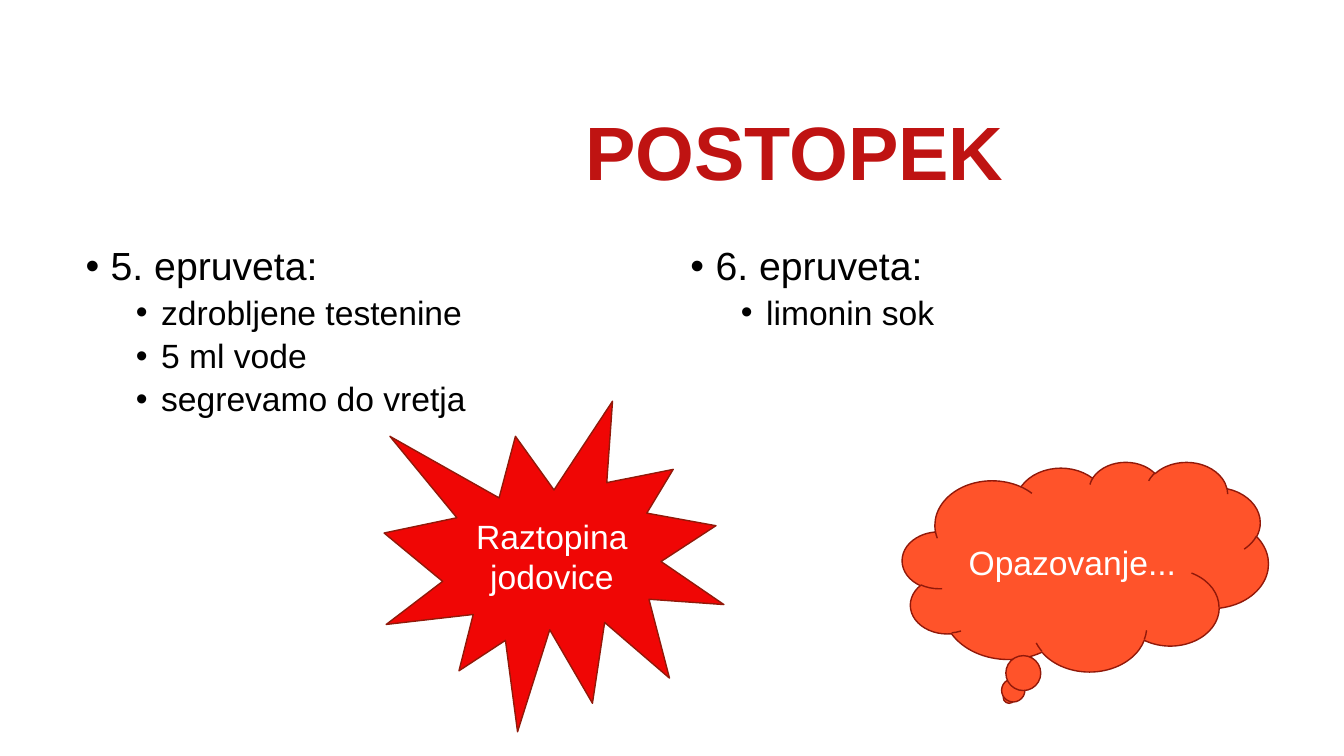
from lxml import etree
from pptx import Presentation
from pptx.dml.color import RGBColor
from pptx.enum.shapes import MSO_SHAPE
from pptx.enum.text import MSO_ANCHOR, PP_ALIGN
from pptx.oxml.ns import qn
from pptx.util import Inches, Pt

BURST = MSO_SHAPE.EXPLOSION1
CLOUD = MSO_SHAPE.CLOUD_CALLOUT
MIDDLE = MSO_ANCHOR.MIDDLE
CENTER = PP_ALIGN.CENTER

FONT = "Arial"
TITLE_RED = RGBColor(0xBF, 0x13, 0x12)
BURST_RED = RGBColor(0xF0, 0x06, 0x05)
CLOUD_ORANGE = RGBColor(0xFF, 0x53, 0x2A)
OUTLINE = RGBColor(0x91, 0x19, 0x0A)
BLACK = RGBColor(0, 0, 0)
WHITE = RGBColor(0xFF, 0xFF, 0xFF)

TITLE = "POSTOPEK"
TUBES = [
    ("5. epruveta:", ["zdrobljene testenine", "5 ml vode", "segrevamo do vretja"]),
    ("6. epruveta:", ["limonin sok"]),
]
CALLOUTS = [
    (BURST, (3.81, 3.98, 3.37, 3.28), BURST_RED, "Raztopina jodovice"),
    (CLOUD, (8.95, 4.58, 3.63, 2.08), CLOUD_ORANGE, "Opazovanje..."),
]
COLUMN_LEFT, COLUMN_TOP = 0.75, 2.4
COLUMN_WIDTH, COLUMN_HEIGHT, COLUMN_STEP = 5.83, 4.4, 6.0
LEVELS = [(0.25, 28, 10), (0.75, 24, 5)]  # indent, text size, space before


def add_run(p, text, size, color, bold=False):
    r = p.add_run()
    r.text = text
    r.font.name = FONT
    r.font.size = Pt(size)
    r.font.bold = bold
    r.font.color.rgb = color


def add_bullet(p, text, level, first):
    indent, size, space = LEVELS[level]
    p.level = level
    p.line_spacing = 0.9
    p.space_before = Pt(0 if first else space)
    pPr = p._p.get_or_add_pPr()
    pPr.set("marL", str(Inches(indent)))
    pPr.set("indent", str(Inches(-0.25)))
    etree.SubElement(pPr, qn("a:buFont")).set("typeface", FONT)
    etree.SubElement(pPr, qn("a:buChar")).set("char", "•")
    add_run(p, text, size, BLACK)


def add_tube(s, column, heading, steps):
    box = s.shapes.add_textbox(
        Inches(COLUMN_LEFT + column * COLUMN_STEP), Inches(COLUMN_TOP),
        Inches(COLUMN_WIDTH), Inches(COLUMN_HEIGHT))
    tf = box.text_frame
    tf.word_wrap = True
    add_bullet(tf.paragraphs[0], heading, 0, True)
    for step in steps:
        add_bullet(tf.add_paragraph(), step, 1, False)


def add_callout(s, kind, place, fill, text):
    sp = s.shapes.add_shape(kind, *map(Inches, place))
    sp.shadow.inherit = False
    sp.fill.solid()
    sp.fill.fore_color.rgb = fill
    sp.line.color.rgb = OUTLINE
    sp.line.width = Pt(1)
    tf = sp.text_frame
    tf.word_wrap = True
    tf.vertical_anchor = MIDDLE
    p = tf.paragraphs[0]
    p.alignment = CENTER
    add_run(p, text, 24, WHITE)


def main():
    prs = Presentation()
    prs.slide_width, prs.slide_height = Inches(13.33), Inches(7.5)
    s = prs.slides.add_slide(prs.slide_layouts[5])

    title = s.shapes.title
    title.left, title.top = Inches(3.17), Inches(0.84)
    title.width, title.height = Inches(9.42), Inches(1.41)
    title.text_frame.vertical_anchor = MIDDLE
    p = title.text_frame.paragraphs[0]
    p.alignment = CENTER
    p.line_spacing = 0.9
    add_run(p, TITLE, 54, TITLE_RED, bold=True)

    for column, (heading, steps) in enumerate(TUBES):
        add_tube(s, column, heading, steps)
    for callout in CALLOUTS:
        add_callout(s, *callout)
    prs.save("out.pptx")


if __name__ == "__main__":
    main()
